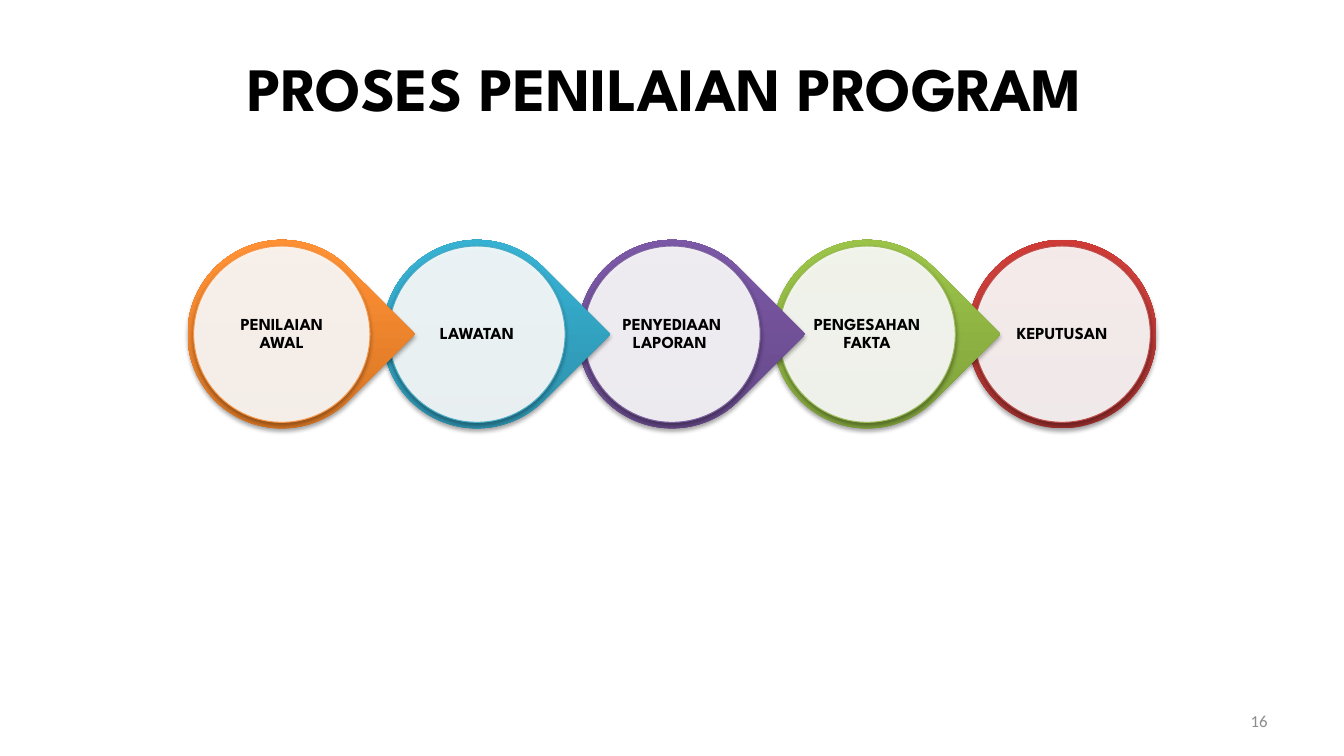
"""Build the programme evaluation process slide with five chained circular stages."""
import pptx
import pptx.util
import pptx.oxml
import pptx.oxml.ns
import pptx.dml.color
import pptx.enum.shapes
import pptx.enum.text

Inches = pptx.util.Inches
Shapes = pptx.enum.shapes.MSO_SHAPE
Align = pptx.enum.text.PP_ALIGN

TITLE = "PROSES PENILAIAN PROGRAM "
PAGE_NUMBER = "16"
STAGES = [
    ("PENILAIAN AWAL", "orange"),
    ("LAWATAN", "teal"),
    ("PENYEDIAAN LAPORAN ", "purple"),
    ("PENGESAHAN FAKTA", "green"),
    ("KEPUTUSAN", "red"),
]
THEME = {
    "accents": {
        "orange": {"line": "F79646", "stops": ("CC6E20", "FF9034", "FF9136")},
        "teal": {"line": "4BACC6", "stops": ("2A88A2", "37B1D2", "34B4D6")},
        "purple": {"line": "8064A2", "stops": ("5F4480", "7B58A6", "7C57A8")},
        "green": {"line": "9BBB59", "stops": ("779737", "9BC348", "9DC746")},
        "red": {"line": "C0504D", "stops": ("9C2F2D", "CB3E3A", "CE3B37")},
    },
    "disc": "FFFFFF",
    "title": {"name": "League Spartan", "size": 44, "bold": True, "color": "000000"},
    "label": {"name": "League Spartan", "size": 12, "bold": True, "color": "000000"},
    "number": {"name": "Calibri", "size": 12, "bold": False, "color": "8C8C8C"},
}
STOP_POSITIONS = (0, 80, 100)
FIRST_LEFT, LAST_LEFT, TOP = 1.86, 9.6, 2.38
RING, DISC, LABEL = 1.87, 1.75, 1.25
NAMESPACE = pptx.oxml.ns.nsdecls("a")


def rgb(value):
    return pptx.dml.color.RGBColor.from_string(value)


def add_text(page, text, frame, style, align, margin=None, spacing=None):
    box = page.shapes.add_textbox(*map(Inches, frame))
    text_frame = box.text_frame
    settings = {"word_wrap": True, "vertical_anchor": pptx.enum.text.MSO_ANCHOR.MIDDLE}
    if margin is not None:
        for side in ("left", "top", "right", "bottom"):
            settings["margin_" + side] = Inches(margin)
    for name, value in settings.items():
        setattr(text_frame, name, value)
    para = text_frame.paragraphs[0]
    para.alignment = align
    para.line_spacing = spacing
    span = para.add_run()
    span.text = text
    formats = {"name": style["name"], "size": pptx.util.Pt(style["size"]), "bold": style["bold"]}
    for name, value in formats.items():
        setattr(span.font, name, value)
    span.font.color.rgb = rgb(style["color"])


def add_round(page, kind, left, top, size):
    shape = page.shapes.add_shape(kind, *map(Inches, (left, top, size, size)))
    shape.shadow.inherit = False
    effects = shape._element.spPr.find(pptx.oxml.ns.qn("a:effectLst"))
    effects.append(pptx.oxml.parse_xml(
        f'<a:outerShdw {NAMESPACE} blurRad="{pptx.util.Pt(3.1)}" dist="{pptx.util.Pt(1.8)}" '
        'dir="5400000" rotWithShape="0"><a:srgbClr val="000000">'
        '<a:alpha val="35000"/></a:srgbClr></a:outerShdw>'))
    return shape


def fill_gradient(shape, colors):
    stops = "".join(
        f'<a:gs pos="{position * 1000}"><a:srgbClr val="{color}"/></a:gs>'
        for position, color in zip(STOP_POSITIONS, colors))
    gradient = pptx.oxml.parse_xml(
        f'<a:gradFill {NAMESPACE} rotWithShape="0"><a:gsLst>{stops}</a:gsLst>'
        '<a:lin ang="16200000" scaled="0"/></a:gradFill>')
    shape._element.spPr.find(pptx.oxml.ns.qn("a:prstGeom")).addnext(gradient)


def add_stage(page, text, accent, left, is_last):
    ring = add_round(page, Shapes.OVAL if is_last else Shapes.TEAR, left, TOP, RING)
    ring.rotation = 0 if is_last else 45
    ring.line.fill.background()
    fill_gradient(ring, accent["stops"])

    inset = (RING - DISC) / 2
    disc = add_round(page, Shapes.OVAL, left + inset, TOP + inset, DISC)
    disc.fill.solid()
    disc.fill.fore_color.rgb = rgb(THEME["disc"])
    color = disc._element.spPr.find(pptx.oxml.ns.qn("a:solidFill"))[0]
    color.append(pptx.oxml.parse_xml(f'<a:alpha {NAMESPACE} val="90000"/>'))
    disc.line.color.rgb = rgb(accent["line"])
    disc.line.width = pptx.util.Pt(0.75)

    inset = (RING - LABEL) / 2
    frame = (left + inset, TOP + inset, LABEL, LABEL)
    add_text(page, text, frame, THEME["label"], Align.CENTER, margin=0.02, spacing=0.9)


def main():
    deck = pptx.Presentation()
    deck.slide_width, deck.slide_height = Inches(13.33), Inches(7.5)
    page = deck.slides.add_slide(deck.slide_layouts[6])
    add_text(page, PAGE_NUMBER, (9.56, 6.95, 3.11, 0.4), THEME["number"], Align.RIGHT)
    last = len(STAGES) - 1
    pitch = (LAST_LEFT - FIRST_LEFT) / last
    for index, (text, accent) in reversed(list(enumerate(STAGES))):
        left = FIRST_LEFT + index * pitch
        add_stage(page, text, THEME["accents"][accent], left, index == last)
    add_text(page, TITLE, (1.68, 0.28, 10, 1.17), THEME["title"], Align.CENTER)
    deck.save("out.pptx")


if __name__ == "__main__":
    main()
